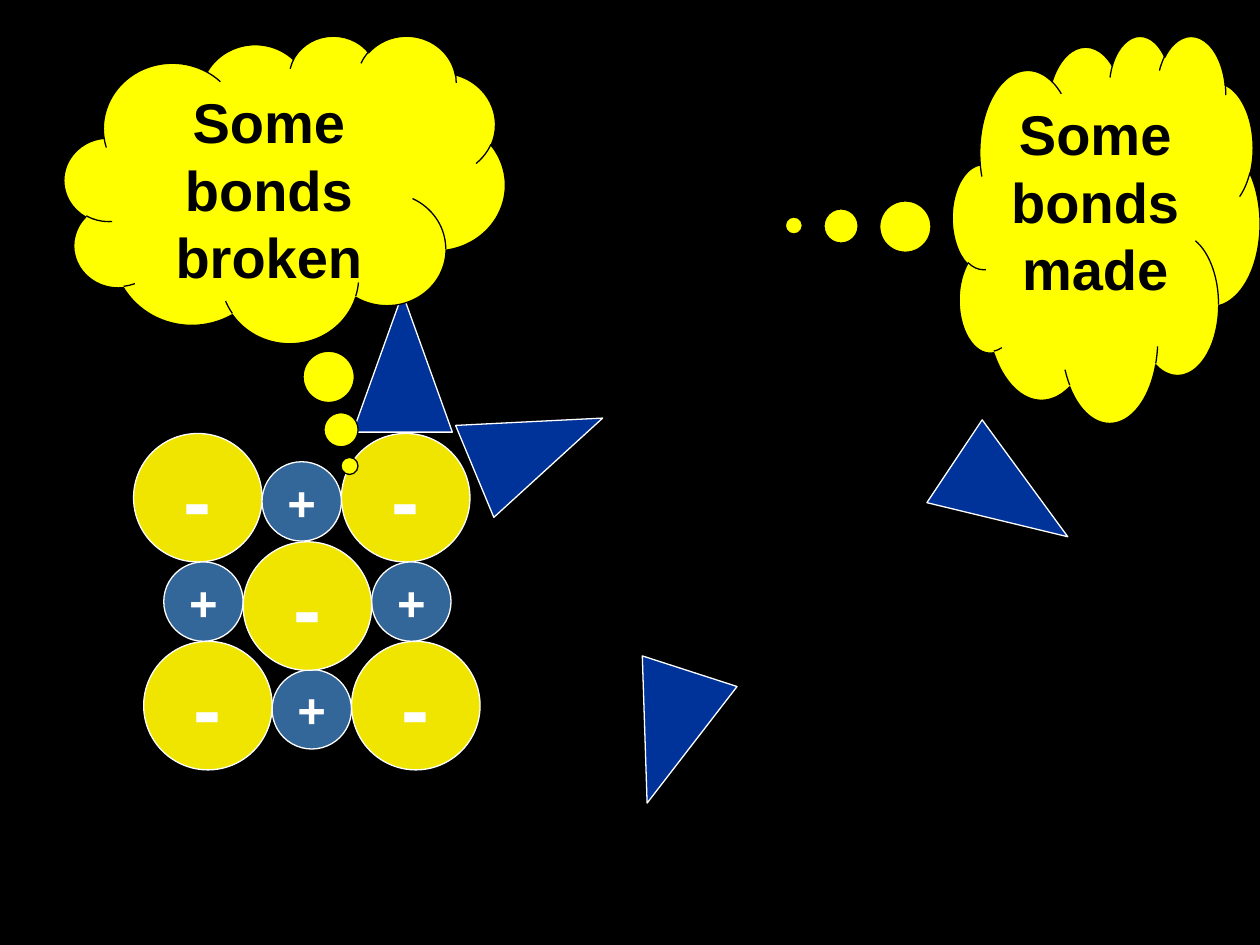
from pptx import Presentation
from pptx.dml.color import RGBColor
from pptx.enum.shapes import MSO_SHAPE
from pptx.enum.text import MSO_ANCHOR, PP_ALIGN
from pptx.util import Inches, Pt

COLORS = {
    "black": "000000",
    "white": "FFFFFF",
    "anion": "F0E500",
    "cation": "336699",
    "water": "003399",
    "cloud": "FFFF00",
}


class Board:
    font = "Arial"
    stroke = Pt(0.75)

    def __init__(self, deck):
        self.slide = deck.slides.add_slide(deck.slide_layouts[6])
        self.paint(self.slide.background.fill, "black")

    def paint(self, fill, color):
        fill.solid()
        fill.fore_color.rgb = RGBColor.from_string(COLORS[color])

    def shape(self, kind, box, fill, line):
        item = self.slide.shapes.add_shape(kind, *map(Inches, box))
        item.shadow.inherit = False
        self.paint(item.fill, fill)
        self.paint(item.line.fill, line)
        item.line.width = self.stroke
        return item

    def label(self, item, text, size, color, anchor, wrap):
        frame = item.text_frame
        frame.text = text
        frame.word_wrap = wrap
        frame.vertical_anchor = anchor
        para = frame.paragraphs[0]
        para.alignment = PP_ALIGN.CENTER
        font = para.runs[0].font
        font.name, font.size, font.bold = self.font, Pt(size), True
        font.color.rgb = RGBColor.from_string(COLORS[color])

    def ion(self, left, top, side, sign, size, fill):
        item = self.shape(MSO_SHAPE.OVAL, (left, top, side, side), fill, "white")
        self.label(item, sign, size, "white", MSO_ANCHOR.MIDDLE, False)

    def water(self, left, top, height, turn):
        box = (left, top, 0.79, height)
        item = self.shape(MSO_SHAPE.ISOSCELES_TRIANGLE, box, "water", "white")
        item.rotation = turn

    def cloud(self, box, tail, text):
        item = self.shape(MSO_SHAPE.CLOUD_CALLOUT, box, "cloud", "black")
        item.adjustments[0], item.adjustments[1] = tail
        self.label(item, text, 32, "black", MSO_ANCHOR.TOP, True)


def main():
    deck = Presentation()
    deck.slide_width, deck.slide_height = Inches(10), Inches(7.5)
    board = Board(deck)

    big, small = 1.02, 0.63
    pitch = big + small
    left, top, skew = 1.06, 3.44, 0.08
    inset = (big - small) / 2 + 0.03

    for row in range(2):
        x, y = left + row * skew, top + row * pitch
        for col in range(2):
            board.ion(x + col * pitch, y, big, "-", 48, "anion")
        board.ion(x + big, y + inset, small, "+", 28, "cation")
    for col in range(2):
        board.ion(1.3 + col * pitch, top + big, small, "+", 28, "cation")
    board.ion(1.93, 4.3, big, "-", 48, "anion")

    for spot in (
        (2.8, 2.33, 1.1, 0),
        (3.88, 2.98, 1.1, 67.4),
        (7.63, 3.42, 1.08, 123.7),
        (4.91, 5.3, 1.1, 197.9),
    ):
        board.water(*spot)

    board.cloud((0.51, 0.28, 3.5, 2.44), (0.147, 0.901), "Some bonds broken")
    board.cloud((7.56, 0.28, 2.44, 3.07), (-1.016, -0.008), "Some bonds made")

    deck.save("out.pptx")


if __name__ == "__main__":
    main()
